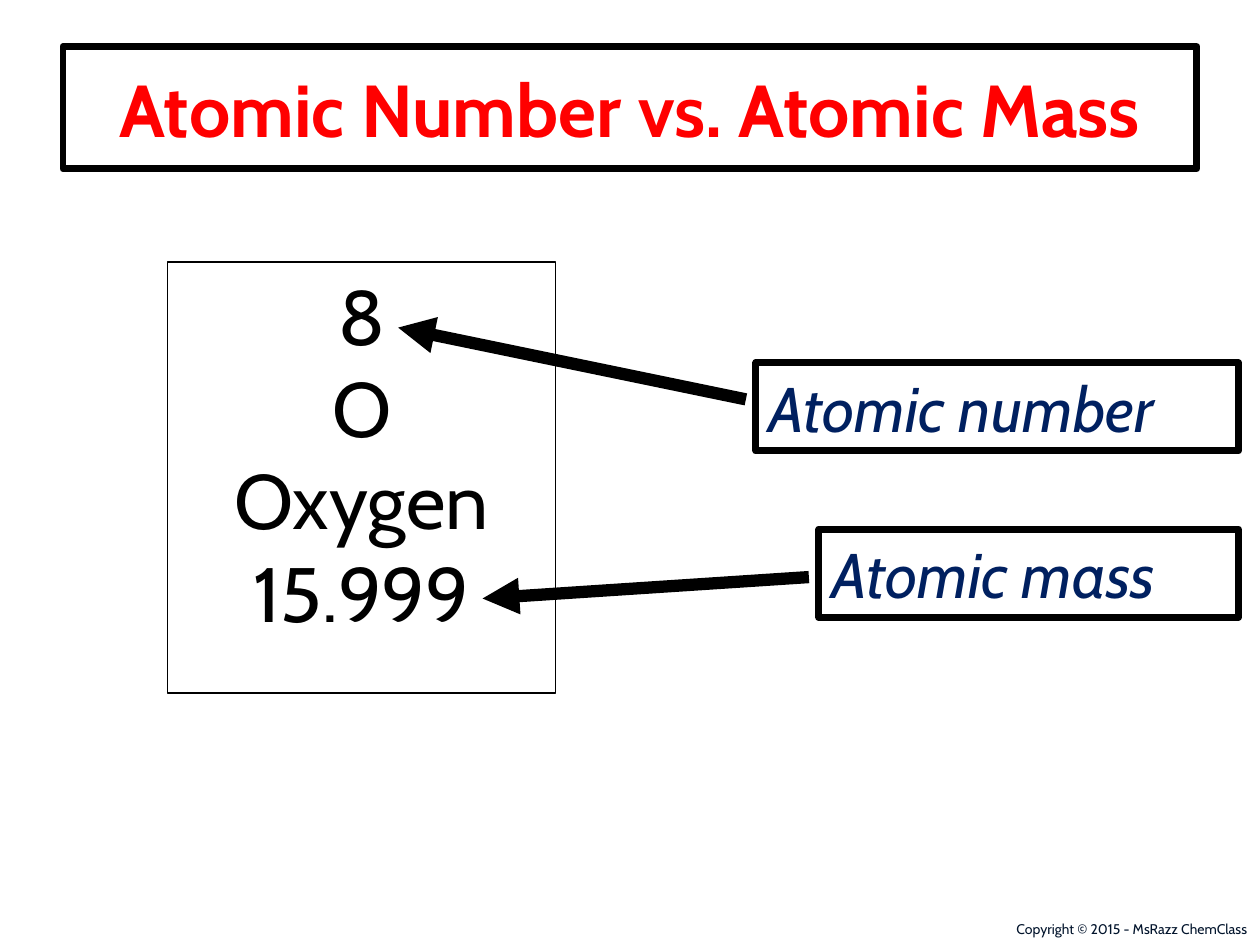
from lxml.etree import SubElement
from pptx import Presentation
from pptx.dml.color import RGBColor
from pptx.enum.shapes import MSO_CONNECTOR, MSO_SHAPE
from pptx.enum.text import MSO_ANCHOR, PP_ALIGN
from pptx.oxml.ns import qn
from pptx.util import Inches, Pt

FONT = "Cabin"
BLACK, WHITE, RED, NAVY, INK = "000000", "FFFFFF", "FF0000", "002060", "02142C"


def color(hex_value):
    return RGBColor.from_string(hex_value)


def write(shape, text, size, ink, align=PP_ALIGN.LEFT, anchor=MSO_ANCHOR.TOP,
          bold=False, italic=False):
    """Fill a shape with text, one paragraph per line."""
    frame = shape.text_frame
    frame.word_wrap = True
    frame.vertical_anchor = anchor
    frame.text = text
    for paragraph in frame.paragraphs:
        paragraph.alignment = align
        font = paragraph.runs[0].font
        font.name, font.size = FONT, Pt(size)
        font.bold, font.italic = bold, italic
        font.color.rgb = color(ink)


def place(shape, left, top, width, height):
    shape.left, shape.top = Inches(left), Inches(top)
    shape.width, shape.height = Inches(width), Inches(height)


def frame_box(shape, line_width, opacity=100):
    """White fill, optionally see-through, with a black outline."""
    shape.fill.solid()
    shape.fill.fore_color.rgb = color(WHITE)
    if opacity < 100:
        white = shape.fill._xPr.find(qn("a:solidFill"))[0]
        SubElement(white, qn("a:alpha"), val=str(opacity * 1000))
    shape.line.color.rgb = color(BLACK)
    shape.line.width = Pt(line_width)


def add_box(shapes, left, top, width, height, line_width, opacity=100):
    box = shapes.add_shape(MSO_SHAPE.RECTANGLE, Inches(left), Inches(top),
                           Inches(width), Inches(height))
    box.shadow.inherit = False
    frame_box(box, line_width, opacity)
    return box


def add_arrow(shapes, start, end):
    arrow = shapes.add_connector(MSO_CONNECTOR.STRAIGHT,
                                 *map(Inches, start + end))
    arrow.line.color.rgb = color(BLACK)
    arrow.line.width = Pt(7)
    SubElement(arrow.line._get_or_add_ln(), qn("a:tailEnd"), type="triangle")
    SubElement(arrow._element.spPr, qn("a:effectLst"))


def add_label(shapes, text, left, top, right=9.83):
    label = add_box(shapes, left, top, right - left, 0.7, 4, opacity=90)
    write(label, text, 36, NAVY, italic=True)


def main():
    deck = Presentation()
    deck.slide_width, deck.slide_height = Inches(10), Inches(7.5)
    slide = deck.slides.add_slide(deck.slide_layouts[5])
    shapes = slide.shapes

    # Title
    title = shapes.title
    place(title, 0.5, 0.37, 9, 0.97)
    frame_box(title, 4, opacity=80)
    write(title, "Atomic Number vs. Atomic Mass", 42, RED,
          align=PP_ALIGN.CENTER, anchor=MSO_ANCHOR.MIDDLE, bold=True)

    # Element tile with its arrows
    element = shapes.add_group_shape().shapes
    tile = add_box(element, 1.33, 2.08, 3.08, 3.42, 0.75)
    write(tile, "8\nO\nOxygen\n15.999", 44, BLACK, align=PP_ALIGN.CENTER)
    add_arrow(element, (5.92, 3.17), (3.16, 2.6))
    add_arrow(element, (6.42, 4.58), (3.83, 4.75))

    # Labels
    add_label(shapes, "Atomic number", 6, 2.88)
    add_label(shapes, "Atomic mass", 6.5, 4.2)

    # Copyright line
    copyright_line = shapes.add_textbox(Inches(7.63), Inches(7.26),
                                        Inches(2.37), Inches(0.24))
    write(copyright_line, "Copyright © 2015 - MsRazz ChemClass", 8, INK,
          align=PP_ALIGN.RIGHT)

    deck.save("out.pptx")


if __name__ == "__main__":
    main()
